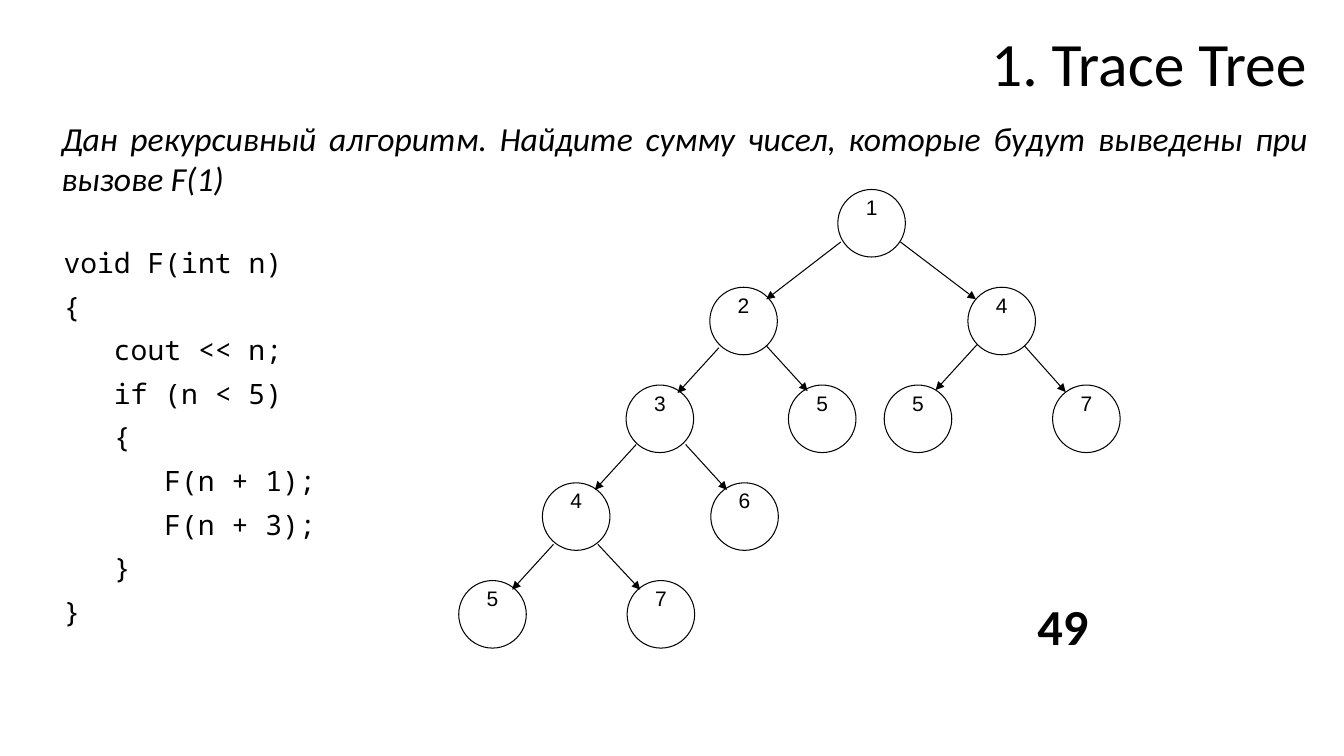
"""Build the slide that traces a recursive algorithm as a call tree."""
import pptx
import pptx.util
import pptx.dml.color
import pptx.enum.shapes
import pptx.enum.text
import pptx.oxml.ns
from lxml import etree

Inches = pptx.util.Inches
Align = pptx.enum.text.PP_ALIGN
Anchor = pptx.enum.text.MSO_ANCHOR
AutoSize = pptx.enum.text.MSO_AUTO_SIZE
qn = pptx.oxml.ns.qn
COLORS = {"ink": "000000", "paper": "FFFFFF"}


def color(name):
    return pptx.dml.color.RGBColor.from_string(COLORS[name])


def add_run(paragraph, text, font, size, bold=False, italic=False):
    run = paragraph.add_run()
    run.text = text
    run.font.name = font
    run.font.size = pptx.util.Pt(size)
    run.font.bold = bold
    run.font.italic = italic
    run.font.color.rgb = color("ink")


presentation = pptx.Presentation()
presentation.slide_width = Inches(13.33)
presentation.slide_height = Inches(7.5)
slide = presentation.slides.add_slide(presentation.slide_layouts[1])

title = slide.shapes.title
title.left, title.top = Inches(9.73), Inches(-0.06)
title.width, title.height = Inches(3.62), Inches(1.45)
title.text_frame.vertical_anchor = Anchor.MIDDLE
title.text_frame.auto_size = AutoSize.NONE
paragraph = title.text_frame.paragraphs[0]
paragraph.alignment = Align.LEFT
paragraph.line_spacing = 0.9
add_run(paragraph, "1. Trace Tree", "Calibri", 44)

code = slide.placeholders[1]
code.left, code.top = Inches(0.53), Inches(2.43)
code.width, code.height = Inches(2.98), Inches(4.76)
code.text_frame.auto_size = AutoSize.NONE
code_lines = [
    (0, "void F(int n)"), (0, "{"), (1, "cout << n;"), (1, "if (n < 5)"), (1, "{"),
    (2, "F(n + 1);"), (2, "F(n + 3);"), (1, "}"), (0, "}"),
]
for index, (depth, text) in enumerate(code_lines):
    paragraph = code.text_frame.add_paragraph() if index else code.text_frame.paragraphs[0]
    paragraph.line_spacing = 0.88
    paragraph.space_before = pptx.util.Pt(10)
    properties = paragraph._p.get_or_add_pPr()
    properties.set("marL", str(Inches(0.5 * depth)))
    properties.set("indent", "0")
    etree.SubElement(properties, qn("a:buNone"))
    add_run(paragraph, text, "Noto Sans Mono", 20)

task = slide.shapes.add_textbox(Inches(0.51), Inches(1.12), Inches(12.56), Inches(0.91))
task.text_frame.word_wrap = True
task.text_frame.auto_size = AutoSize.SHAPE_TO_FIT_TEXT
paragraph = task.text_frame.paragraphs[0]
paragraph.alignment = Align.JUSTIFY
add_run(paragraph, "Дан рекурсивный алгоритм. Найдите сумму чисел, которые будут выведены при вызове F(1)",
        "Calibri", 24, italic=True)

tree_levels = [
    [("1", 8.31)],
    [("2", 7.04), ("4", 9.6)],
    [("3", 6.21), ("5", 7.82), ("5", 8.77), ("7", 10.44)],
    [("4", 5.38), ("6", 7.05)],
    [("5", 4.55), ("7", 6.22)],
]
for depth, nodes in enumerate(tree_levels):
    top = 1.88 + 0.97 * depth
    for number, left in nodes:
        circle = slide.shapes.add_shape(
            pptx.enum.shapes.MSO_SHAPE.OVAL, Inches(left), Inches(top), Inches(0.67), Inches(0.67))
        circle.shadow.inherit = False
        circle.fill.solid()
        circle.fill.fore_color.rgb = color("paper")
        circle.line.color.rgb = color("ink")
        circle.line.width = pptx.util.Pt(0.75)
        label = slide.shapes.add_textbox(
            Inches(left + 0.05), Inches(top + 0.05), Inches(0.57), Inches(0.59))
        frame = label.text_frame
        frame.word_wrap = True
        frame.margin_left = frame.margin_right = Inches(0.02)
        frame.margin_top = frame.margin_bottom = 0
        frame.paragraphs[0].alignment = Align.CENTER
        add_run(frame.paragraphs[0], number, "Arial", 15)

calls = [
    (8.34, 2.4, 7.6, 2.97), (8.93, 2.4, 9.68, 2.97),
    (7.13, 3.45, 6.72, 3.9), (7.6, 3.43, 8.01, 3.88),
    (9.69, 3.42, 9.28, 3.87), (10.16, 3.43, 10.57, 3.89),
    (6.31, 4.41, 5.9, 4.86), (6.8, 4.41, 7.21, 4.86),
    (5.49, 5.4, 5.08, 5.85), (5.93, 5.4, 6.35, 5.85),
]
for ends in calls:
    arrow = slide.shapes.add_connector(
        pptx.enum.shapes.MSO_CONNECTOR.STRAIGHT, *[Inches(value) for value in ends])
    arrow.line.color.rgb = color("ink")
    arrow.line.width = pptx.util.Pt(0.75)
    etree.SubElement(arrow.line._get_or_add_ln(), qn("a:tailEnd"), type="triangle")
    etree.SubElement(arrow._element.spPr, qn("a:effectLst"))

answer = slide.shapes.add_textbox(Inches(10.19), Inches(5.85), Inches(0.71), Inches(0.71))
answer.text_frame.word_wrap = False
answer.text_frame.auto_size = AutoSize.SHAPE_TO_FIT_TEXT
add_run(answer.text_frame.paragraphs[0], "49", "Calibri", 36, bold=True)

presentation.save("out.pptx")
